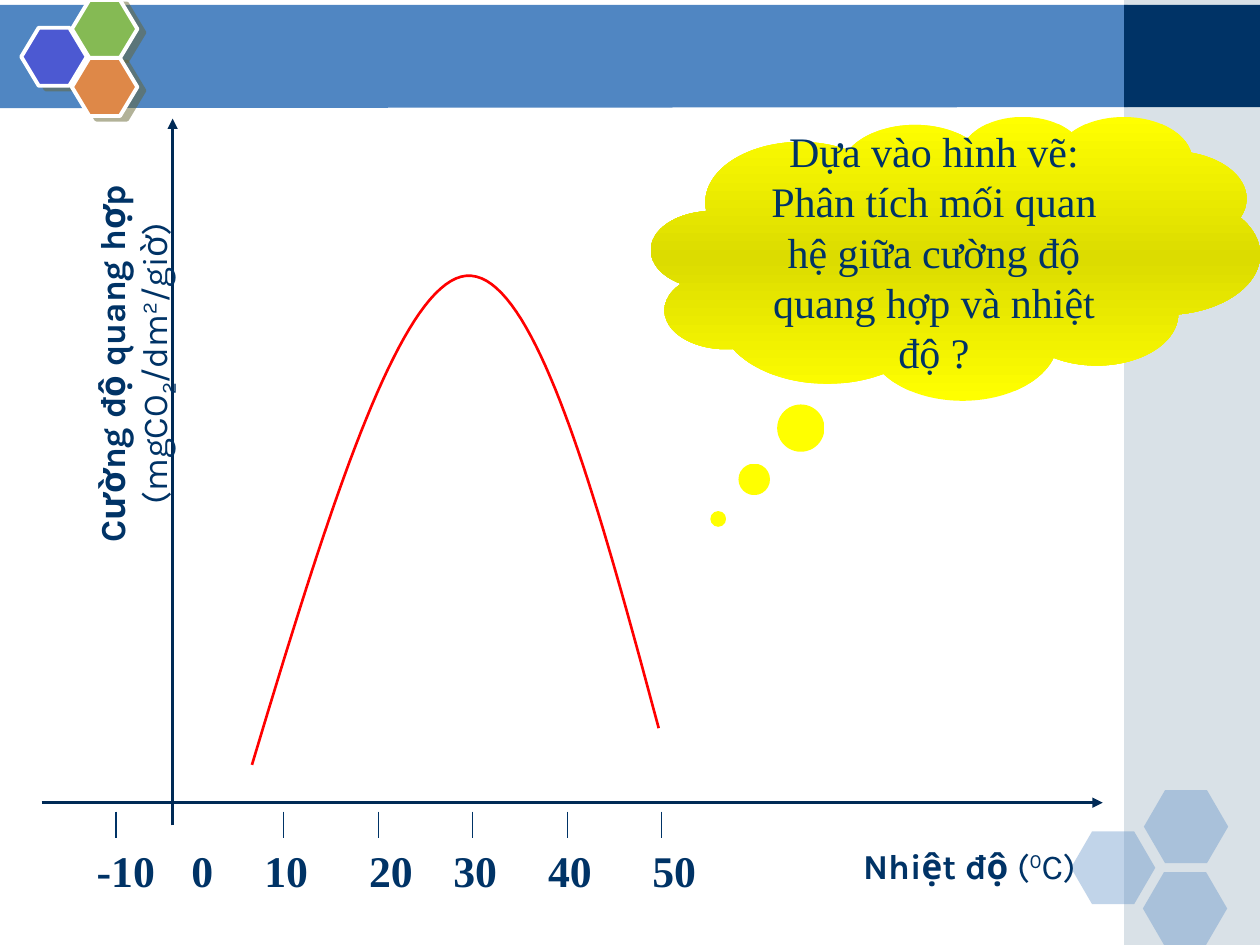
from copy import deepcopy
from lxml.etree import SubElement
from pptx import Presentation
from pptx.dml.color import RGBColor
from pptx.enum.shapes import MSO_CONNECTOR as Link, MSO_SHAPE as Kind
from pptx.enum.text import MSO_ANCHOR as Anchor, PP_ALIGN as Align
from pptx.oxml.ns import qn
from pptx.util import Cm, Pt

HUES = {
    "bar": "5086C2", "navy": "003366", "axis": "002A56", "strip": "A0B5C4",
    "blue": "4C59D2", "green": "85BA54", "orange": "DE8848", "shade": "666633",
    "white": "FFFFFF", "red": "FF0000", "yellow": "FFFF00", "olive": "DCDC00",
}
RGB = {name: RGBColor.from_string(code) for name, code in HUES.items()}

deck = Presentation()
deck.slide_width, deck.slide_height = Cm(25.4), Cm(19.05)
slide = deck.slides.add_slide(deck.slide_layouts[6])
shapes = slide.shapes


def paint(shape, hue, alpha=100):
    """Flat fill with no outline or shadow; alpha in percent."""
    shape.shadow.inherit = False
    shape.fill.solid()
    shape.fill.fore_color.rgb = RGB[hue]
    shape.line.fill.background()
    if alpha < 100:
        tint = shape.fill._xPr.find(".//" + qn("a:srgbClr"))
        SubElement(tint, qn("a:alpha"), val=str(alpha * 1000))


def write(box, parts, size, font, align=Align.LEFT):
    """Fill one paragraph with (text, bold, baseline percent) parts."""
    frame = box.text_frame
    frame.word_wrap = True
    para = frame.paragraphs[0]
    para.alignment = align
    for text, bold, base in parts:
        run = para.add_run()
        run.text = text
        run.font.size, run.font.name, run.font.bold = Pt(size), font, bold
        run.font.color.rgb = RGB["navy"]
        if base:
            run.font._element.set("baseline", str(base * 1000))


# Header bar and right strip
pen = shapes.build_freeform(Cm(-0.03), Cm(0.1))
pen.add_line_segments([(Cm(22.73), Cm(0.1)), (Cm(22.73), Cm(2.16)),
                       (Cm(-0.03), Cm(2.18))])
paint(pen.convert_to_shape(), "bar")
for top, high, hue, alpha in [(0, 19.05, "strip", 40), (0.1, 2.06, "navy", 100)]:
    rect = shapes.add_shape(Kind.RECTANGLE, Cm(22.66), Cm(top), Cm(2.74), Cm(high))
    paint(rect, hue, alpha)

# Pale hexagons at the bottom right
for left, top in [(21.59, 16.76), (23.06, 15.93), (23.04, 17.58)]:
    hexa = shapes.add_shape(Kind.HEXAGON, Cm(left), Cm(top), Cm(1.7), Cm(1.47))
    hexa.adjustments[0] = 0.29
    paint(hexa, "bar", 35)

# Bright hexagons at the top left
for left, top, hue in [(0.43, 0.56, "blue"), (1.45, 0, "green"), (1.45, 1.17, "orange")]:
    hexa = shapes.add_shape(Kind.HEXAGON, Cm(left), Cm(top), Cm(1.32), Cm(1.17))
    hexa.adjustments[0] = 0.3
    paint(hexa, hue)
    hexa.line.color.rgb = RGB["white"]
    hexa.line.width = Pt(2.25)
    effects = hexa._element.spPr.find(qn("a:effectLst"))
    shade = SubElement(effects, qn("a:outerShdw"), dist=str(Pt(4.5)),
                       dir=str(27 * 60000), algn="ctr", rotWithShape="0")
    tint = SubElement(shade, qn("a:srgbClr"), val=HUES["shade"])
    SubElement(tint, qn("a:alpha"), val="50000")

# Axes with arrowheads, then ticks
lines = [(3.48, 16.64, 3.48, 2.39, True), (0.84, 16.18, 22.23, 16.18, True)]
ticks = [2.34] + [5.72 + 1.905 * i for i in range(5)]
lines += [(x, 16.36, x, 16.89, False) for x in ticks]
for x1, y1, x2, y2, axis in lines:
    line = shapes.add_connector(Link.STRAIGHT, Cm(x1), Cm(y1), Cm(x2), Cm(y2))
    line.line.color.rgb = RGB["axis" if axis else "navy"]
    line.line.width = Pt(1.5 if axis else 0.75)
    if axis:
        SubElement(line.line._get_or_add_ln(), qn("a:tailEnd"), type="triangle")
    SubElement(line._element.spPr, qn("a:effectLst"))

# Tick labels
for text, left, wide in [("-10", 1.7, 1.7), ("10", 5.08, 1.7), ("20", 7.19, 1.47),
                         ("30", 8.89, 1.7), ("40", 10.8, 1.47), ("50", 12.9, 1.47),
                         ("0", 3.61, 0.84)]:
    box = shapes.add_textbox(Cm(left), Cm(16.89), Cm(wide), Cm(1.6))
    write(box, [(text, True, 0)], 25, "Times New Roman")

# Bell curve, sampled from two cubic arcs
arcs = [[(5.08, 15.42), (6.55, 10.54), (8.03, 5.69), (9.4, 5.56)],
        [(9.4, 5.56), (10.77, 5.44), (12.04, 10.06), (13.28, 14.68)]]
steps = 40
spots = []
for arc in arcs:
    for i in range(1, steps + 1):
        t = i / steps
        mix = [(1 - t) ** 3, 3 * t * (1 - t) ** 2, 3 * t * t * (1 - t), t ** 3]
        spots.append([Cm(sum(m * p[k] for m, p in zip(mix, arc))) for k in (0, 1)])
pen = shapes.build_freeform(Cm(5.08), Cm(15.42))
pen.add_line_segments(spots, close=False)
curve = pen.convert_to_shape()
curve.shadow.inherit = False
curve.fill.background()
curve.line.color.rgb = RGB["red"]
curve.line.width = Pt(1.5)

# Axis titles
box = shapes.add_textbox(Cm(17.15), Cm(16.89), Cm(5.72), Cm(1.09))
write(box, [("Nhiệt độ ", True, 0), ("(", False, 0), ("0", False, 30),
            ("C)", False, 0)], 20, "Karla")
box = shapes.add_textbox(Cm(-2.97), Cm(6.35), Cm(11.28), Cm(1.96))
box.rotation = 270
write(box, [("Cường độ quang hợp ", True, 0), ("(mgCO", False, 0), ("2", False, -25),
            ("/dm", False, 0), ("2", False, 30), ("/giờ)", False, 0)],
      20, "Karla", Align.CENTER)

# Question cloud
cloud = shapes.add_shape(Kind.CLOUD_CALLOUT, Cm(13.13), Cm(2.34), Cm(12.27), Cm(5.72))
cloud.adjustments[0], cloud.adjustments[1] = -0.39, 0.92
paint(cloud, "yellow")
cloud.fill.gradient()
cloud.fill.gradient_angle = 90
stops = cloud._element.spPr.find(".//" + qn("a:gsLst"))
stops.insert(1, deepcopy(stops[0]))
for stop, spot, hue in zip(cloud.fill.gradient_stops, (0, 0.5, 1),
                           ("yellow", "olive", "yellow")):
    stop.position = spot
    stop.color.rgb = RGB[hue]
cloud.text_frame.vertical_anchor = Anchor.MIDDLE
write(cloud, [("Dựa vào hình vẽ: Phân tích mối quan hệ giữa cường độ quang hợp "
               "và nhiệt độ ?", False, 0)], 24, "Times New Roman", Align.CENTER)

deck.save("out.pptx")
